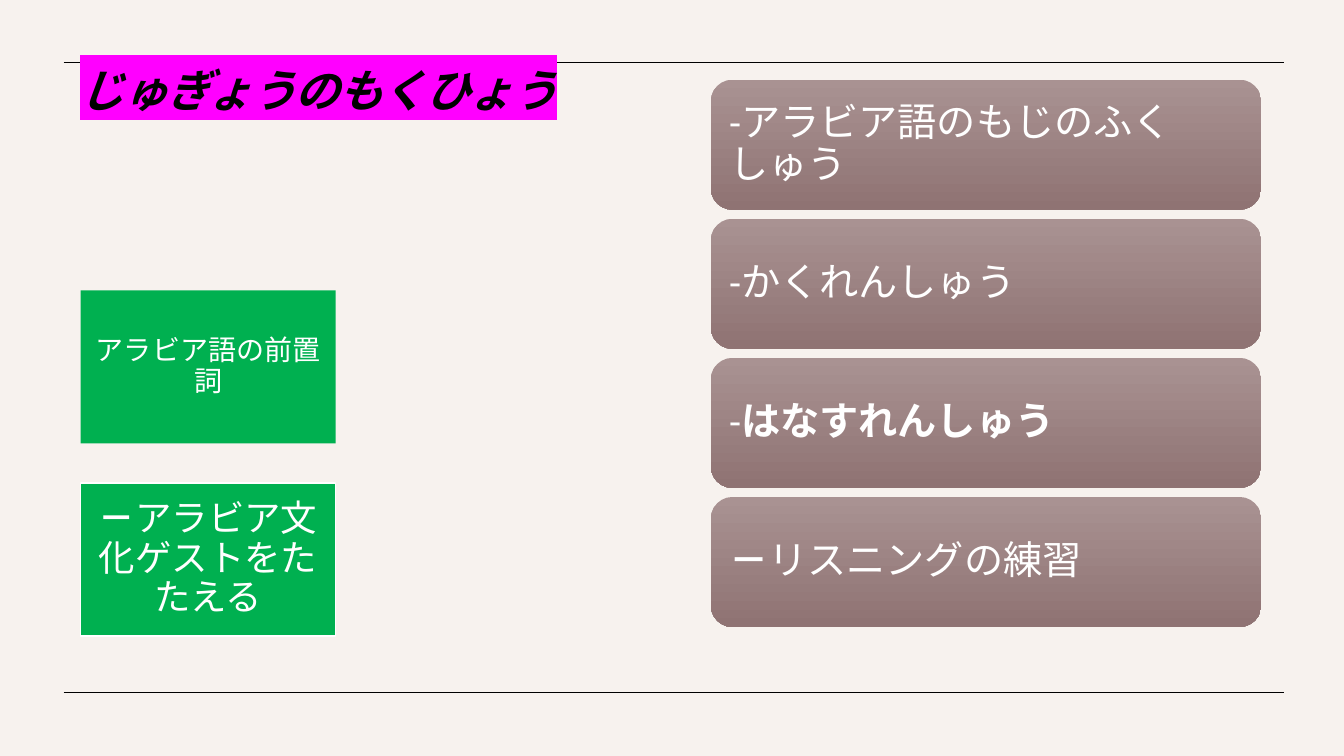
from dataclasses import dataclass
from typing import Optional

from lxml.etree import SubElement
from pptx import Presentation
from pptx.dml.color import RGBColor
from pptx.enum.lang import MSO_LANGUAGE_ID as Lang
from pptx.enum.shapes import MSO_CONNECTOR as Connector, MSO_SHAPE as Shape
from pptx.enum.text import MSO_ANCHOR as Anchor, PP_ALIGN as Align
from pptx.oxml.ns import qn
from pptx.util import Pt

EMU_PER_PX = 9144
COLORS = {
    "background": "F7F2EE",
    "black": "000000",
    "white": "FFFFFF",
    "highlight": "FF00FF",
    "green": "00B050",
    "card_top": "A99292",
    "card_bottom": "8F7373",
}


@dataclass(frozen=True)
class Run:
    text: str
    bold: bool = False


@dataclass(frozen=True)
class Box:
    x: int
    y: int
    w: int
    h: int
    runs: tuple[Run, ...]
    size: int
    inset: int
    align: Align = Align.LEFT
    border: Optional[str] = None


GOALS = (
    (Run("-アラビア語のもじのふくしゅう"),),
    (Run("-かくれんしゅう"),),
    (Run("-"), Run("はなすれんしゅう", True)),
    (Run("－", True), Run("リスニングの練習")),
)
CARDS = [Box(705, 79 + 138 * i, 546, 129, runs, 28, 12) for i, runs in enumerate(GOALS)]
TOPICS = (
    Box(80, 288, 253, 152, (Run("アラビア語の前置詞"),), 20, 8, Align.CENTER),
    Box(80, 479, 253, 152, (Run("－", True), Run("アラビア文化ゲストをたたえる")),
        26, 8, Align.CENTER, "white"),
)
TITLE = Box(79, 68, 549, 161, (Run("じゅぎょうのもくひょう", True),), 32, 0)


def px(n: int) -> int:
    return n * EMU_PER_PX


def rgb(name: str) -> RGBColor:
    return RGBColor.from_string(COLORS[name])


def add_rule(s, y: int) -> None:
    line = s.shapes.add_connector(Connector.STRAIGHT, px(63), px(y), px(1273), px(y))
    line.line.color.rgb = rgb("black")
    line.line.width = Pt(0.5)
    SubElement(line._element.spPr, qn("a:effectLst"))


def write(sp, box: Box, color: str, font: str, anchor: Anchor) -> list:
    tf = sp.text_frame
    tf.word_wrap = True
    tf.vertical_anchor = anchor
    tf.margin_left = tf.margin_right = tf.margin_top = tf.margin_bottom = px(box.inset)
    p = tf.paragraphs[0]
    p.alignment = box.align
    p.line_spacing = 0.9
    for run in box.runs:
        r = p.add_run()
        r.text = run.text
        r.font.name = font
        r.font.size = Pt(box.size)
        r.font.bold = run.bold
        r.font.language_id = Lang.JAPANESE
        r.font.color.rgb = rgb(color)
    return list(p.runs)


def add_box(s, box: Box, kind: Shape):
    sp = s.shapes.add_shape(kind, px(box.x), px(box.y), px(box.w), px(box.h))
    sp.shadow.inherit = False
    if box.border:
        sp.line.color.rgb = rgb(box.border)
        sp.line.width = Pt(1)
    else:
        sp.line.fill.background()
    write(sp, box, "white", "Calibri", Anchor.MIDDLE)
    return sp


def add_card(s, box: Box) -> None:
    fill = add_box(s, box, Shape.ROUNDED_RECTANGLE).fill
    fill.gradient()
    fill.gradient_angle = 270
    for stop, name in zip(fill.gradient_stops, ("card_top", "card_bottom")):
        stop.color.rgb = rgb(name)


def add_topic(s, box: Box) -> None:
    fill = add_box(s, box, Shape.RECTANGLE).fill
    fill.solid()
    fill.fore_color.rgb = rgb("green")


def add_title(s, box: Box) -> None:
    sp = s.shapes.add_textbox(px(box.x), px(box.y), px(box.w), px(box.h))
    for r in write(sp, box, "black", "Noto Sans CJK KR", Anchor.TOP):
        r.font.italic = True
        rPr = r._r.get_or_add_rPr()
        rPr.set("spc", "-100")
        latin = rPr.find(qn("a:latin"))
        highlight = SubElement(rPr, qn("a:highlight"))
        SubElement(highlight, qn("a:srgbClr"), val=COLORS["highlight"])
        latin.addprevious(highlight)
        SubElement(rPr, qn("a:ea"), typeface="Noto Sans CJK KR")


def main() -> None:
    prs = Presentation()
    prs.slide_width, prs.slide_height = px(1333), px(750)
    s = prs.slides.add_slide(prs.slide_layouts[6])
    s.background.fill.solid()
    s.background.fill.fore_color.rgb = rgb("background")
    for y in (62, 687):
        add_rule(s, y)
    add_title(s, TITLE)
    for card in CARDS:
        add_card(s, card)
    for topic in TOPICS:
        add_topic(s, topic)
    prs.save("out.pptx")


if __name__ == "__main__":
    main()
